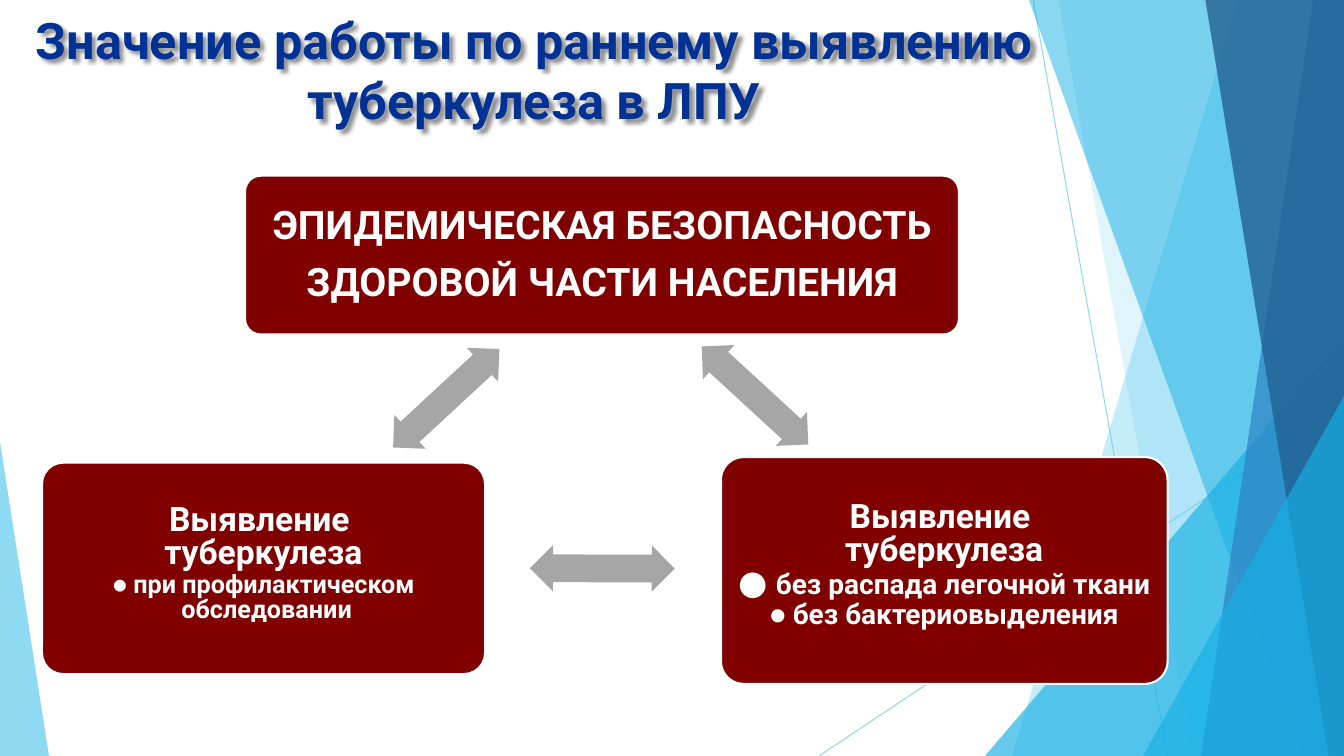
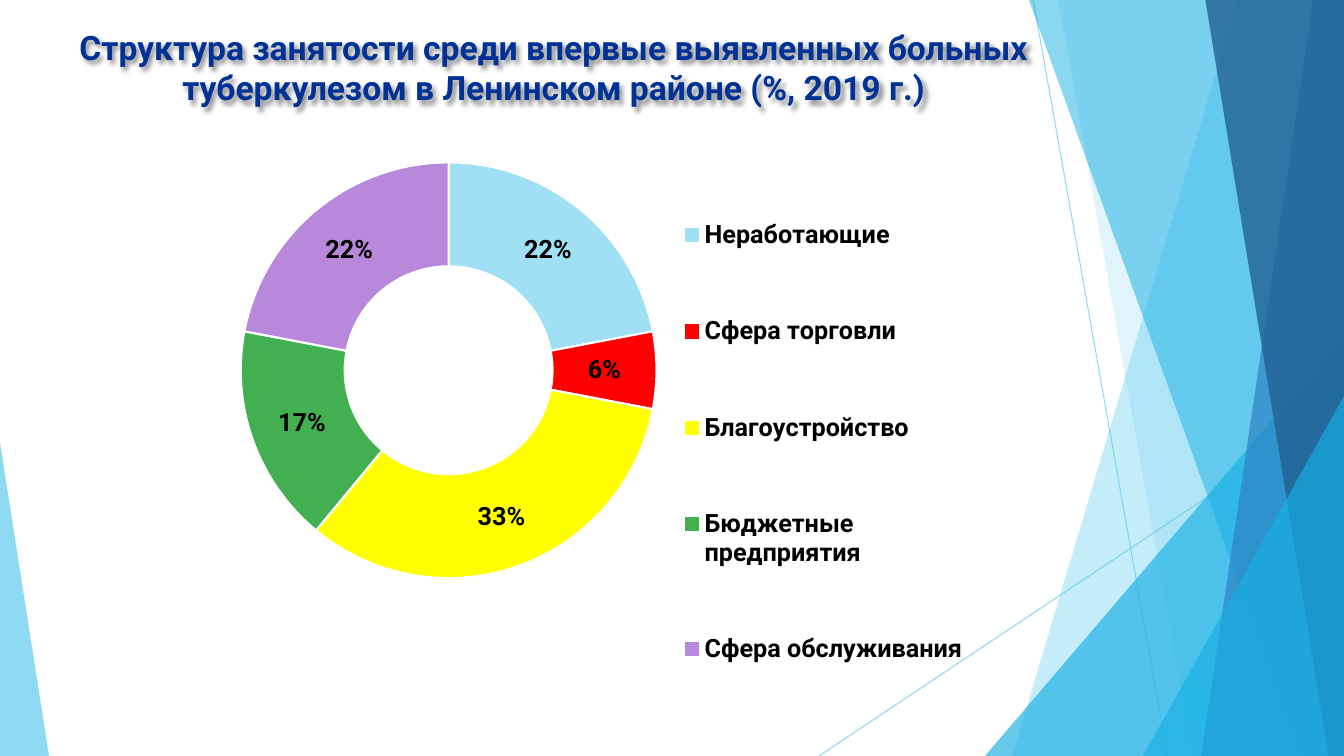
from lxml.etree import SubElement
from pptx import Presentation
from pptx.chart.data import CategoryChartData
from pptx.dml.color import RGBColor
from pptx.enum.chart import XL_CHART_TYPE, XL_LEGEND_POSITION
from pptx.enum.shapes import MSO_CONNECTOR, MSO_SHAPE
from pptx.enum.text import MSO_ANCHOR, PP_ALIGN
from pptx.oxml import parse_xml
from pptx.oxml.ns import nsdecls, qn
from pptx.util import Pt

WIDTH, HEIGHT = 960, 540
FONT = "Roboto"
COLORS = {
    "sky": "5FCBEF", "azure": "17B0E4", "blue": "2E83C3", "navy": "226292",
    "title": "003296", "maroon": "800000", "gray": "A6A6A6",
    "white": "FFFFFF", "black": "000000",
    "pale": "9FE0F5", "red": "FF0000", "yellow": "FFFF00",
    "green": "42B051", "violet": "B889DB",
}
RGB = {name: RGBColor.from_string(value) for name, value in COLORS.items()}

deck = Presentation()
deck.slide_width, deck.slide_height = Pt(WIDTH), Pt(HEIGHT)
layout = deck.slide_layouts[6]
pages = [deck.slides.add_slide(layout) for _ in range(2)]
safety_page, jobs_page = pages

# Decoration: drawn once, then moved to the layout that both pages share
decoration = []
for start, end in [((738, 0), (834, HEIGHT)), ((WIDTH, 290), (585, HEIGHT))]:
    line = safety_page.shapes.add_connector(
        MSO_CONNECTOR.STRAIGHT, *[Pt(value) for value in start + end])
    line.line.color.rgb = RGB["sky"]
    line.line.width = Pt(0.75)
    SubElement(line.element.spPr, qn("a:effectLst"))
    decoration.append((line, 70))

# Bands give left edge at top and bottom; triangles give left, top, width, peak
for kind, color, opacity, *place in [
    ("band", "sky", 36, 884, 723),
    ("band", "sky", 20, 756, 852),
    ("triangle", "azure", 66, 703.5, 240, 256.5, 1),
    ("band", "azure", 50, 735, 929.5),
    ("band", "blue", 70, 938, 858),
    ("band", "navy", 80, 861, 949),
    ("triangle", "azure", 66, 816.5, 283, 143.5, 1),
    ("triangle", "sky", 70, 0, 316, 35, 0),
]:
    if kind == "band":
        top_x, bottom_x = place
        outline = safety_page.shapes.build_freeform(Pt(top_x), 0)
        outline.add_line_segments([
            (Pt(WIDTH), 0), (Pt(WIDTH), Pt(HEIGHT)), (Pt(bottom_x), Pt(HEIGHT))])
        shape = outline.convert_to_shape()
    else:
        left, top, width, peak = place
        shape = safety_page.shapes.add_shape(
            MSO_SHAPE.ISOSCELES_TRIANGLE, Pt(left), Pt(top), Pt(width), Pt(HEIGHT - top))
        shape.adjustments[0] = peak
    shape.fill.solid()
    shape.fill.fore_color.rgb = RGB[color]
    shape.line.fill.background()
    shape.shadow.inherit = False
    decoration.append((shape, opacity))

for shape, opacity in decoration:
    for color in shape.element.iter(qn("a:srgbClr")):
        SubElement(color, qn("a:alpha"), val=str(opacity * 1000))
    layout.shapes.element.append(shape.element)

# Titles
for page, text, size, top, width, height in [
    (safety_page, "Значение работы по раннему выявлению туберкулеза в ЛПУ", 36, 0, 763, 99),
    (jobs_page, "Структура занятости среди впервые выявленных больных "
     "туберкулезом в Ленинском районе (%, 2019 г.)", 24, 15, 791, 66),
]:
    box = page.shapes.add_textbox(0, Pt(top), Pt(width), Pt(height))
    box.text_frame.word_wrap = True
    box.text_frame.vertical_anchor = MSO_ANCHOR.MIDDLE
    para = box.text_frame.paragraphs[0]
    para.alignment = PP_ALIGN.CENTER
    span = para.add_run()
    span.text = text
    span.font.name, span.font.size, span.font.bold = FONT, Pt(size), True
    span.font.color.rgb = RGB["title"]
    box.element.spPr.append(parse_xml(
        f'<a:effectLst {nsdecls("a")}><a:outerShdw blurRad="38100" dist="38100" dir="2700000">'
        f'<a:srgbClr val="{COLORS["black"]}"><a:alpha val="43000"/></a:srgbClr>'
        '</a:outerShdw></a:effectLst>'))

# Slide 1: three boxes; each paragraph is a list of (text, size, font)
heading = [[("Выявление ", 24, FONT)], [("туберкулеза", 24, FONT)]]
for left, top, width, height, spacing, paragraphs in [
    (175, 125.5, 510, 113.5, 0.9, [
        [("ЭПИДЕМИЧЕСКАЯ БЕЗОПАСНОСТЬ", 28, FONT)],
        [("ЗДОРОВОЙ ЧАСТИ НАСЕЛЕНИЯ", 28, FONT)]]),
    (515, 326.5, 319, 162, 0.5, heading + [
        [("● ", 24, FONT), ("без распада легочной ткани", 20, FONT)],
        [("● ", 20, "Calibri"), ("без бактериовыделения", 20, FONT)]]),
    (30, 330.5, 316.5, 151, 0.5, heading + [
        [("● ", 18, "Calibri"), ("при профилактическом", 18, FONT)],
        [(" обследовании", 18, FONT)]]),
]:
    box = safety_page.shapes.add_shape(
        MSO_SHAPE.ROUNDED_RECTANGLE, Pt(left), Pt(top), Pt(width), Pt(height))
    box.adjustments[0] = 0.1
    box.shadow.inherit = False
    box.fill.solid()
    box.fill.fore_color.rgb = RGB["maroon"]
    box.line.color.rgb = RGB["white"]
    box.line.width = Pt(1.5)
    frame = box.text_frame
    frame.word_wrap = True
    frame.vertical_anchor = MSO_ANCHOR.MIDDLE
    frame.margin_left = frame.margin_right = Pt(7)
    for index, spans in enumerate(paragraphs):
        para = frame.add_paragraph() if index else frame.paragraphs[0]
        para.alignment = PP_ALIGN.CENTER
        para.line_spacing = spacing
        para.space_after = Pt(round(spans[0][1] * 0.38, 1))
        for text, size, font in spans:
            span = para.add_run()
            span.text = text
            span.font.name, span.font.size, span.font.bold = font, Pt(size), True
            span.font.color.rgb = RGB["white"]

for left, top, angle in [(487.5, 266, 42.6), (378.5, 389.5, 180.2), (267, 268, 317.2)]:
    arrow = safety_page.shapes.add_shape(
        MSO_SHAPE.LEFT_RIGHT_ARROW, Pt(left), Pt(top), Pt(103.5), Pt(33))
    arrow.adjustments[0], arrow.adjustments[1] = 0.6, 0.5
    arrow.rotation = angle
    arrow.shadow.inherit = False
    arrow.fill.solid()
    arrow.fill.fore_color.rgb = RGB["gray"]
    arrow.line.fill.background()

# Slide 2: doughnut of employment
jobs = [
    ("Неработающие", 22, "pale"),
    ("Сфера торговли", 6, "red"),
    ("Благоустройство", 33, "yellow"),
    ("Бюджетные предприятия", 17, "green"),
    ("Сфера обслуживания", 22, "violet"),
]
data = CategoryChartData()
data.categories = [name for name, _, _ in jobs]
data.add_series("Занятость", [share for _, share, _ in jobs])
CHART = (0, 110, 730, 418)
chart = jobs_page.shapes.add_chart(
    XL_CHART_TYPE.DOUGHNUT, *[Pt(value) for value in CHART], data).chart
chart.has_title = False
chart.font.name, chart.font.size, chart.font.bold = FONT, Pt(18), True
chart.font.color.rgb = RGB["black"]
chart.has_legend = True
chart.legend.position = XL_LEGEND_POSITION.RIGHT
chart.legend.include_in_layout = False

plot = chart.plots[0]
plot.vary_by_categories = True
plot.has_data_labels = True
plot.data_labels.show_percentage = True
plot.data_labels.show_value = False
plot.data_labels.number_format = "0%"
plot.data_labels.number_format_is_linked = False
for index, (_, _, color) in enumerate(jobs):
    slice_format = plot.series[0].points[index].format
    slice_format.fill.solid()
    slice_format.fill.fore_color.rgb = RGB[color]
    slice_format.line.color.rgb = RGB["white"]
    slice_format.line.width = Pt(1.5)


def place_in_chart(tag, index, target, left, top, width, height):
    """Give a chart part a fixed place, in points on the page."""
    part = chart.element.find(".//" + qn(tag))
    for old in part.findall(qn("c:layout")):
        part.remove(old)
    holder = parse_xml(f'<c:layout {nsdecls("c")}><c:manualLayout/></c:layout>')
    fractions = [
        ("x", (left - CHART[0]) / CHART[2]), ("y", (top - CHART[1]) / CHART[3]),
        ("w", width / CHART[2]), ("h", height / CHART[3])]
    settings = [("layoutTarget", target)] if target else []
    settings += [("xMode", "edge"), ("yMode", "edge")]
    settings += [(name, f"{value:.4f}") for name, value in fractions]
    for name, value in settings:
        SubElement(holder[0], qn("c:" + name), val=value)
    part.insert(index, holder)


place_in_chart("c:plotArea", 0, "inner", 172, 116, 297, 297)
place_in_chart("c:legend", 1, None, 477, 110, 222, 412)
chart.element.find(".//" + qn("c:holeSize")).set("val", "50")

deck.save("out.pptx")
